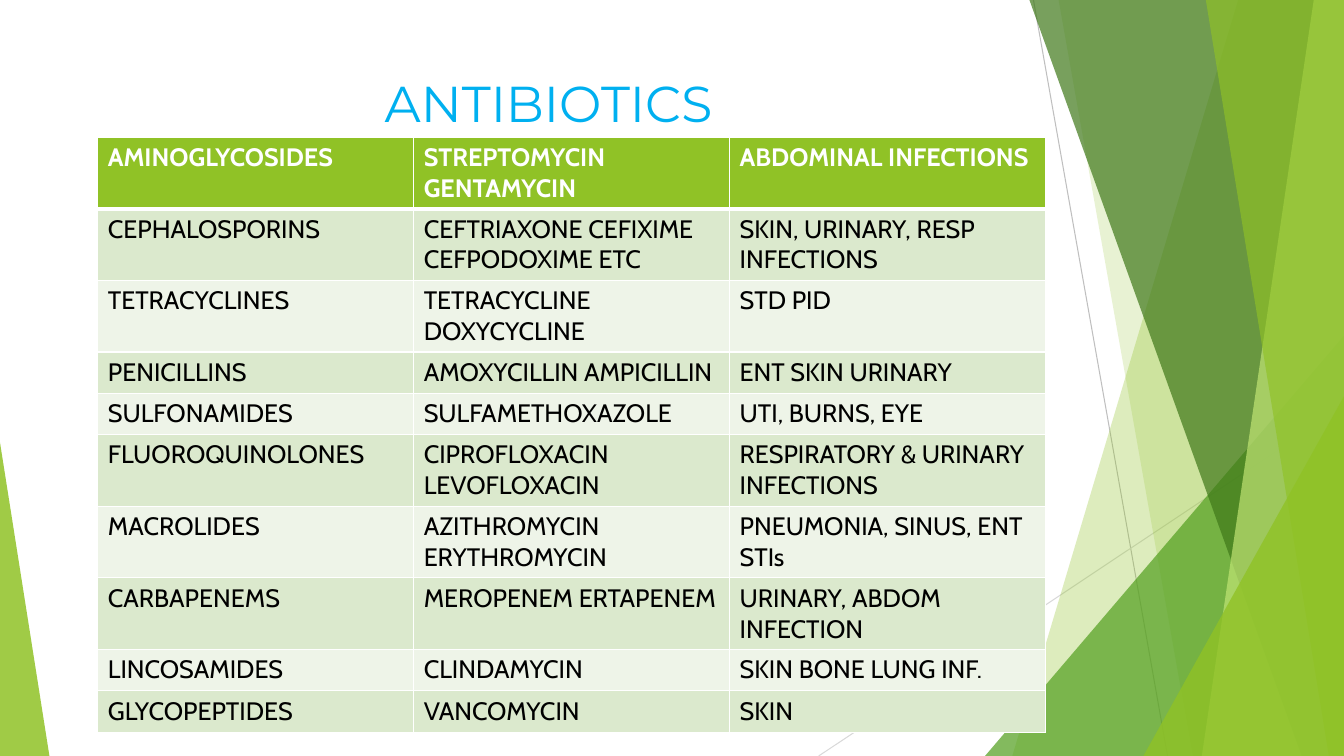
from lxml import etree
from pptx import Presentation
from pptx import util as u
from pptx.dml.color import RGBColor
from pptx.enum import shapes, text
from pptx.oxml import ns

WIDTH, HEIGHT = 13.33, 7.5
GREEN = "90C226"

DRUG_CLASSES = [
    ("AMINOGLYCOSIDES", "STREPTOMYCIN GENTAMYCIN", "ABDOMINAL INFECTIONS"),
    ("CEPHALOSPORINS", "CEFTRIAXONE CEFIXIME CEFPODOXIME ETC", "SKIN, URINARY, RESP INFECTIONS"),
    ("TETRACYCLINES", "TETRACYCLINE DOXYCYCLINE", "STD PID"),
    ("PENICILLINS", "AMOXYCILLIN AMPICILLIN", "ENT SKIN URINARY"),
    ("SULFONAMIDES", "SULFAMETHOXAZOLE", "UTI, BURNS, EYE"),
    ("FLUOROQUINOLONES", "CIPROFLOXACIN LEVOFLOXACIN", "RESPIRATORY & URINARY INFECTIONS"),
    ("MACROLIDES", "AZITHROMYCIN ERYTHROMYCIN", "PNEUMONIA, SINUS, ENT STIs"),
    ("CARBAPENEMS", "MEROPENEM ERTAPENEM", "URINARY, ABDOM INFECTION"),
    ("LINCOSAMIDES", "CLINDAMYCIN", "SKIN BONE LUNG INF."),
    ("GLYCOPEPTIDES", "VANCOMYCIN", "SKIN"),
]


def paint(color_format, color):
    color_format.rgb = RGBColor.from_string(color)


def add_xml(parent, tag, **attributes):
    return etree.SubElement(parent, ns.qn(tag), attributes)


def fill_facet(facet, color, opacity):
    """Give a facet a see-through fill without outline or shadow."""
    facet.shadow.inherit = False
    facet.line.fill.background()
    facet.fill.solid()
    paint(facet.fill.fore_color, color)
    srgb = facet.fill._xPr.find(".//" + ns.qn("a:srgbClr"))
    add_xml(srgb, "a:alpha", val=str(opacity * 1000))


def add_hairline(slide, start, end, color):
    hairline = slide.shapes.add_connector(
        shapes.MSO_CONNECTOR.STRAIGHT, *map(u.Inches, start + end))
    paint(hairline.line.color, color)
    hairline.line.width = u.Pt(0.75)
    add_xml(hairline._element.spPr, "a:effectLst")


def add_band(slide, box, top_left, bottom_left, color, opacity):
    """Fill from a slanted left edge to the right side of the box."""
    left, top, width, height = box
    right, bottom = left + width, top + height
    corners = [(top_left, top), (right, top), (right, bottom), (bottom_left, bottom)]
    points = [(u.Inches(x), u.Inches(y)) for x, y in corners]
    outline = slide.shapes.build_freeform(*points[0])
    outline.add_line_segments(points[1:], close=True)
    fill_facet(outline.convert_to_shape(), color, opacity)


def add_corner(slide, box, apex, color, opacity):
    corner = slide.shapes.add_shape(
        shapes.MSO_SHAPE.ISOSCELES_TRIANGLE, *map(u.Inches, box))
    corner.adjustments[0] = apex
    fill_facet(corner, color, opacity)


def add_facets(slide, box):
    left, top, width, height = box
    right, bottom = left + width, top + height
    add_hairline(slide, (10.25, top), (11.58, bottom), "BFBFBF")
    add_hairline(slide, (right, 4.03), (8.12, bottom), "D9D9D9")

    def corner_at_right(corner_width, corner_height, color, opacity):
        corner_box = (right - corner_width, bottom - corner_height, corner_width, corner_height)
        add_corner(slide, corner_box, 1, color, opacity)

    add_band(slide, box, 12.28, 10.04, GREEN, 30)
    add_band(slide, box, 10.5, 11.83, GREEN, 20)
    corner_at_right(3.56, 4.17, "54A021", 72)
    add_band(slide, box, 10.21, 12.91, "3F7819", 70)
    add_band(slide, box, 13.03, 11.92, "C0E474", 70)
    add_band(slide, box, 11.96, 13.18, GREEN, 65)
    corner_at_right(1.99, 3.57, GREEN, 80)
    add_corner(slide, (left, bottom - 3.11, 0.49, 3.11), 0, GREEN, 85)


def add_run(paragraph, words, font, size, color, bold=False):
    run = paragraph.add_run()
    run.text = words
    run.font.name, run.font.size, run.font.bold = font, u.Pt(size), bold
    paint(run.font.color, color)


def fill_title(slide, box):
    title = slide.shapes.title
    title.left, title.top, title.width, title.height = map(u.Inches, box)
    title.text_frame.word_wrap = True
    title.text_frame.vertical_anchor = text.MSO_ANCHOR.TOP
    heading = title.text_frame.paragraphs[0]
    heading.alignment = text.PP_ALIGN.CENTER
    add_run(heading, "ANTIBIOTICS", "Montserrat", 36, "00B0F0")


def add_borders(cell, row):
    widths = {"L": 1, "R": 1, "T": 3 if row == 1 else 1, "B": 3 if row == 0 else 1}
    for side, points in widths.items():
        border = add_xml(cell._tc.get_or_add_tcPr(), "a:ln" + side, w=str(u.Pt(points)))
        add_xml(add_xml(border, "a:solidFill"), "a:srgbClr", val="FFFFFF")


def add_drug_table(slide, box):
    row_count, column_count = len(DRUG_CLASSES), len(DRUG_CLASSES[0])
    left, top, width, row_height = box
    table = slide.shapes.add_table(
        row_count, column_count, u.Inches(left), u.Inches(top),
        u.Inches(width), u.Inches(row_height * row_count)).table
    for r, drug_class in enumerate(DRUG_CLASSES):
        header = r == 0
        band = GREEN if header else ("EEF4E8", "DBE9CD")[r % 2]
        for c, words in enumerate(drug_class):
            cell = table.cell(r, c)
            add_borders(cell, r)
            cell.fill.solid()
            paint(cell.fill.fore_color, band)
            add_run(cell.text_frame.paragraphs[0], words, "Cabin", 18,
                    "FFFFFF" if header else "000000", header)


def main():
    deck = Presentation()
    deck.slide_width, deck.slide_height = u.Inches(WIDTH), u.Inches(HEIGHT)
    slide = deck.slides.add_slide(deck.slide_layouts[5])
    add_facets(slide, (0, 0, WIDTH, HEIGHT))
    fill_title(slide, (0.74, 0.67, 9.4, 1.24))
    add_drug_table(slide, (0.97, 1.36, 9.4, 0.41))
    deck.save("out.pptx")


if __name__ == "__main__":
    main()
